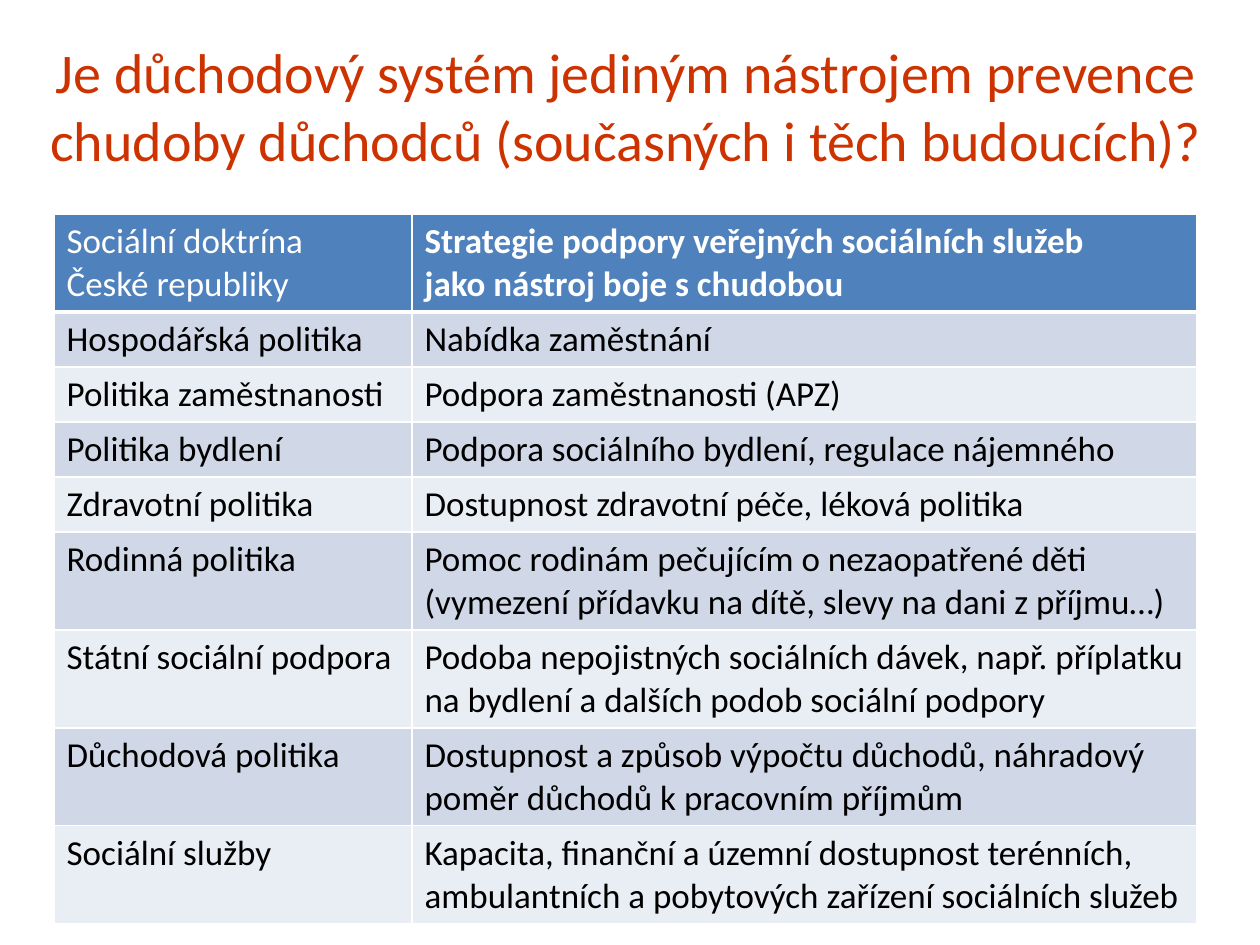
from typing import NamedTuple

from lxml import etree
from pptx import Presentation, util as u
from pptx.dml.color import RGBColor
from pptx.enum import text
from pptx.oxml import ns

PX = 914400 // 126
FONT = "Calibri"
COLORS = {
    "title": "CC3300",
    "header": "4F81BD",
    "band_dark": "D0D8E8",
    "band_light": "E9EDF4",
    "white": "FFFFFF",
    "black": "000000",
}
TITLE = ("Je důchodový systém jediným nástrojem prevence "
         "chudoby důchodců (současných i těch budoucích)?")
COLUMN_WIDTHS = (358, 785)
SINGLE_ROW, DOUBLE_ROW = 55, 98


class Policy(NamedTuple):
    name: str
    support: str
    height: int = SINGLE_ROW


class CellStyle(NamedTuple):
    fill: str
    color: str
    bold: bool = False
    bottom_border: int = 1


HEADER = Policy("Sociální doktrína\nČeské republiky",
                "Strategie podpory veřejných sociálních služeb\n"
                "jako nástroj boje s chudobou", DOUBLE_ROW)
POLICIES = (
    Policy("Hospodářská politika", "Nabídka zaměstnání"),
    Policy("Politika zaměstnanosti", "Podpora zaměstnanosti (APZ)"),
    Policy("Politika bydlení", "Podpora sociálního bydlení, regulace nájemného"),
    Policy("Zdravotní politika", "Dostupnost zdravotní péče, léková politika"),
    Policy("Rodinná politika",
           "Pomoc rodinám pečujícím o nezaopatřené děti "
           "(vymezení přídavku na dítě, slevy na dani z příjmu…)", DOUBLE_ROW),
    Policy("Státní sociální podpora",
           "Podoba nepojistných sociálních dávek, např. příplatku "
           "na bydlení a dalších podob sociální podpory", DOUBLE_ROW),
    Policy("Důchodová politika",
           "Dostupnost a způsob výpočtu důchodů, náhradový "
           "poměr důchodů k pracovním příjmům", DOUBLE_ROW),
    Policy("Sociální služby",
           "Kapacita, finanční a územní dostupnost terénních, "
           "ambulantních a pobytových zařízení sociálních služeb", DOUBLE_ROW),
)


def px(*lengths: int) -> list[u.Emu]:
    return [u.Emu(length * PX) for length in lengths]


def rgb(name: str) -> RGBColor:
    return RGBColor.from_string(COLORS[name])


def set_font(paragraph, size: int, color: str, bold: bool = False) -> None:
    font = paragraph.font
    font.name, font.size, font.bold = FONT, u.Pt(size), bold
    font.color.rgb = rgb(color)


def add_border(cell, tag: str, points: int) -> None:
    properties = cell._tc.get_or_add_tcPr()
    line = etree.SubElement(properties, ns.qn(tag), w=str(u.Pt(points)))
    fill = etree.SubElement(line, ns.qn("a:solidFill"))
    etree.SubElement(fill, ns.qn("a:srgbClr"), val=COLORS["white"])


def fill_cell(cell, content: str, style: CellStyle, top_border: int) -> None:
    cell.text = content
    for paragraph in cell.text_frame.paragraphs:
        set_font(paragraph, 20, style.color, style.bold)
    # Borders must come before the fill
    borders = {"a:lnL": 1, "a:lnR": 1, "a:lnT": top_border, "a:lnB": style.bottom_border}
    for tag, points in borders.items():
        add_border(cell, tag, points)
    cell.fill.solid()
    cell.fill.fore_color.rgb = rgb(style.fill)


def add_title(slide) -> None:
    frame = slide.shapes.add_textbox(*px(28, 26, 1197, 158)).text_frame
    frame.word_wrap = True
    frame.vertical_anchor = text.MSO_ANCHOR.MIDDLE
    paragraph = frame.paragraphs[0]
    paragraph.text = TITLE
    paragraph.alignment = text.PP_ALIGN.CENTER
    set_font(paragraph, 32, "title")


def add_policy_table(slide) -> None:
    rows = (HEADER, *POLICIES)
    width, height = sum(COLUMN_WIDTHS), sum(row.height for row in rows)
    table = slide.shapes.add_table(
        len(rows), len(COLUMN_WIDTHS), *px(54, 214, width, height)).table
    table.horz_banding = False
    for column, column_width in zip(table.columns, px(*COLUMN_WIDTHS)):
        column.width = column_width

    top_border = 1
    for index, row in enumerate(rows):
        table.rows[index].height = px(row.height)[0]
        is_header = index == 0
        if is_header:
            style = CellStyle("header", "white", bottom_border=3)
        else:
            style = CellStyle("band_dark" if index % 2 else "band_light", "black")
        fill_cell(table.cell(index, 0), row.name, style, top_border)
        fill_cell(table.cell(index, 1), row.support,
                  style._replace(bold=is_header), top_border)
        top_border = style.bottom_border


def main() -> None:
    presentation = Presentation()
    presentation.slide_width, presentation.slide_height = u.Inches(10), u.Inches(7.5)
    slide = presentation.slides.add_slide(presentation.slide_layouts[6])
    add_title(slide)
    add_policy_table(slide)
    presentation.save("out.pptx")


if __name__ == "__main__":
    main()
